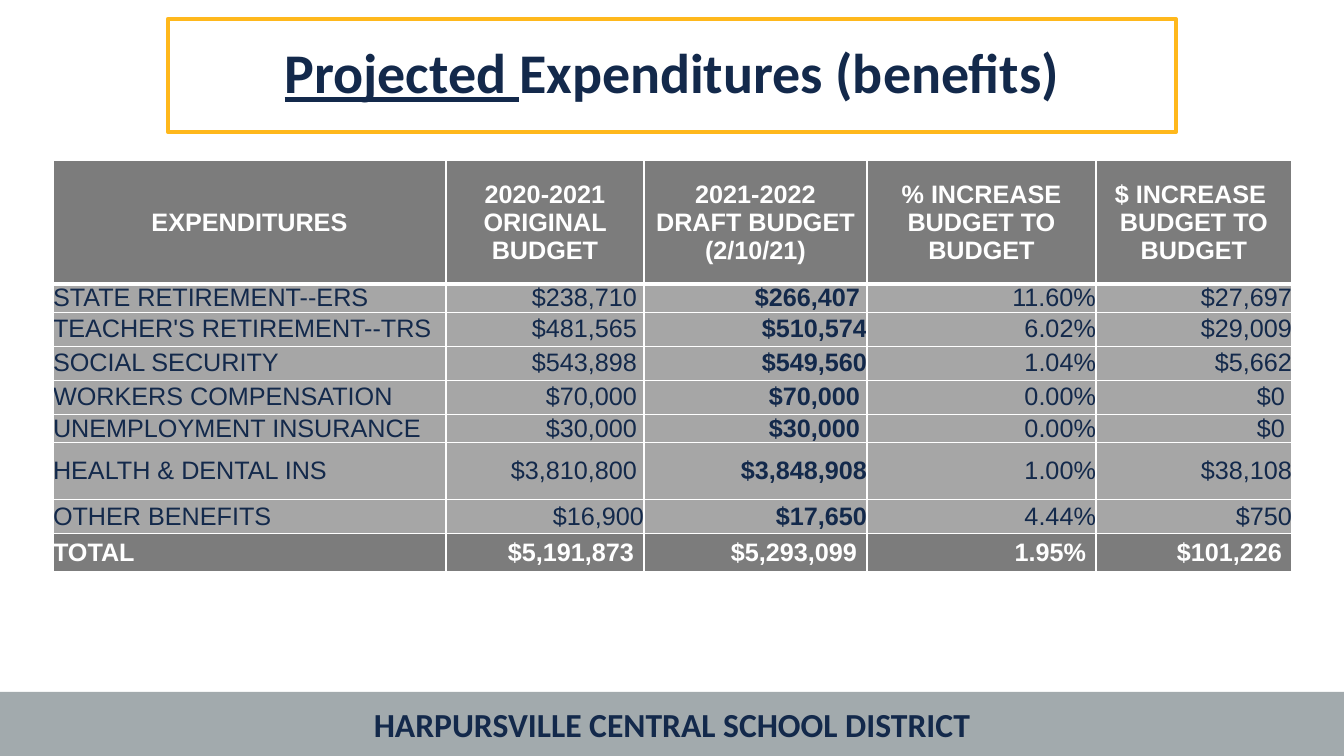
import pptx
import pptx.dml.color
import pptx.enum.shapes
import pptx.enum.text
import pptx.util
from lxml import etree
from pptx.oxml.ns import qn

EMU_PER_PX = 914400 / 100.8
WIDTH, HEIGHT = 1344, 756
NAVY, GOLD, SILVER, WHITE = "13294B", "FFB81C", "A2AAAD", "FFFFFF"
DARK_GREY, MID_GREY = "7C7C7C", "A6A6A6"
ALIGN = pptx.enum.text.PP_ALIGN
MIDDLE = pptx.enum.text.MSO_ANCHOR.MIDDLE

COLUMN_WIDTHS = [393, 198, 223, 229, 196]
ROW_HEIGHTS = [124, 28, 34, 34, 34, 28, 57, 34, 38]
HEADINGS = [
    "EXPENDITURES",
    "2020-2021\nORIGINAL BUDGET",
    "2021-2022\nDRAFT BUDGET (2/10/21)",
    "% INCREASE BUDGET TO BUDGET",
    "$ INCREASE \nBUDGET TO BUDGET",
]
BENEFITS = [
    ["STATE RETIREMENT--ERS", "$238,710 ", "$266,407 ", "11.60%", "$27,697"],
    ["TEACHER'S RETIREMENT--TRS", "$481,565 ", "$510,574", "6.02%", "$29,009"],
    ["SOCIAL SECURITY", "$543,898 ", "$549,560", "1.04%", "$5,662"],
    ["WORKERS COMPENSATION", "$70,000 ", "$70,000 ", "0.00%", "$0 "],
    ["UNEMPLOYMENT INSURANCE", "$30,000 ", "$30,000 ", "0.00%", "$0 "],
    ["HEALTH & DENTAL INS", "$3,810,800 ", "$3,848,908", "1.00%", "$38,108"],
    ["OTHER BENEFITS", "$16,900", "$17,650", "4.44%", "$750"],
]
TOTALS = ["TOTAL", "$5,191,873", "$5,293,099", "1.95%", "$101,226"]
DRAFT_COLUMN = 2


def px(length):
    return pptx.util.Emu(round(length * EMU_PER_PX))


def rgb(color):
    return pptx.dml.color.RGBColor.from_string(color)


def write(frame, text, underlined="", font="Arial", size=18, color=NAVY,
          bold=False, align=ALIGN.CENTER, spacing=None):
    """Write one paragraph per line; an underlined lead goes before the text."""
    frame.word_wrap = True
    for index, line in enumerate(text.split("\n")):
        paragraph = frame.paragraphs[0] if index == 0 else frame.add_paragraph()
        paragraph.alignment = align
        if spacing:
            paragraph.line_spacing = spacing
        lead = underlined if index == 0 else ""
        for part, underline in ((lead, True), (line, False)):
            if part:
                run = paragraph.add_run()
                run.text = part
                run.font.name = font
                run.font.size = pptx.util.Pt(size)
                run.font.bold = bold
                run.font.underline = underline
                run.font.color.rgb = rgb(color)


def add_panel(slide, box, fill=None, line=None):
    panel = slide.shapes.add_shape(
        pptx.enum.shapes.MSO_SHAPE.RECTANGLE, *map(px, box))
    panel.shadow.inherit = False
    if fill:
        panel.fill.solid()
        panel.fill.fore_color.rgb = rgb(fill)
    else:
        panel.fill.background()
    if line:
        panel.line.color.rgb = rgb(line)
        panel.line.width = pptx.util.Pt(3)
    else:
        panel.line.fill.background()
    panel.text_frame.vertical_anchor = MIDDLE
    return panel.text_frame


def add_title(slide, box):
    write(add_panel(slide, box, line=GOLD), "Expenditures (benefits)",
          underlined="Projected ", font="Calibri", size=40, bold=True,
          spacing=0.9)


def add_footer(slide, box):
    write(add_panel(slide, box, fill=SILVER),
          "HARPURSVILLE CENTRAL SCHOOL DISTRICT",
          font="Calibri", size=24, bold=True)


def set_borders(cell, top, bottom):
    properties = cell._tc.get_or_add_tcPr()
    widths = {"lnL": 1, "lnR": 1, "lnT": top, "lnB": bottom}
    for position, (side, width) in enumerate(widths.items()):
        border = etree.Element(qn(f"a:{side}"), w=str(pptx.util.Pt(width)))
        fill = etree.SubElement(border, qn("a:solidFill"))
        etree.SubElement(fill, qn("a:srgbClr"), val=WHITE)
        properties.insert(position, border)


def set_margins(cell, left, top, right, bottom):
    cell.margin_left, cell.margin_top = px(left), px(top)
    cell.margin_right, cell.margin_bottom = px(right), px(bottom)


def add_budget_table(slide, left, top):
    rows = [HEADINGS, *BENEFITS, TOTALS]
    table = slide.shapes.add_table(
        len(rows), len(HEADINGS), px(left), px(top),
        px(sum(COLUMN_WIDTHS)), px(sum(ROW_HEIGHTS))).table
    for column, width in zip(table.columns, COLUMN_WIDTHS):
        column.width = px(width)
    for row, height in zip(table.rows, ROW_HEIGHTS):
        row.height = px(height)

    for r, values in enumerate(rows):
        is_heading, is_total = r == 0, r == len(rows) - 1
        strong = is_heading or is_total
        for c, value in enumerate(values):
            cell = table.cell(r, c)
            cell.vertical_anchor = MIDDLE
            cell.fill.solid()
            cell.fill.fore_color.rgb = rgb(DARK_GREY if strong else MID_GREY)
            if is_heading:
                align = ALIGN.CENTER
                set_margins(cell, 1, 1, 1, 0)
            else:
                align = ALIGN.LEFT if c == 0 else ALIGN.RIGHT
                if is_total and c > 0:
                    set_margins(cell, 10, 5, 10, 5)
                else:
                    set_margins(cell, 0, 0, 0, 0)
            write(cell.text_frame, value, color=WHITE if strong else NAVY,
                  bold=strong or c == DRAFT_COLUMN, align=align)
            set_borders(cell, top=3 if r == 1 else 1,
                        bottom=3 if is_heading else 1)


def main():
    presentation = pptx.Presentation()
    presentation.slide_width = px(WIDTH)
    presentation.slide_height = px(HEIGHT)
    slide = presentation.slides.add_slide(presentation.slide_layouts[6])
    add_footer(slide, (0, 692, WIDTH, 64))
    add_title(slide, (168, 19, 1008, 113))
    add_budget_table(slide, 53, 160)
    presentation.save("out.pptx")


if __name__ == "__main__":
    main()
